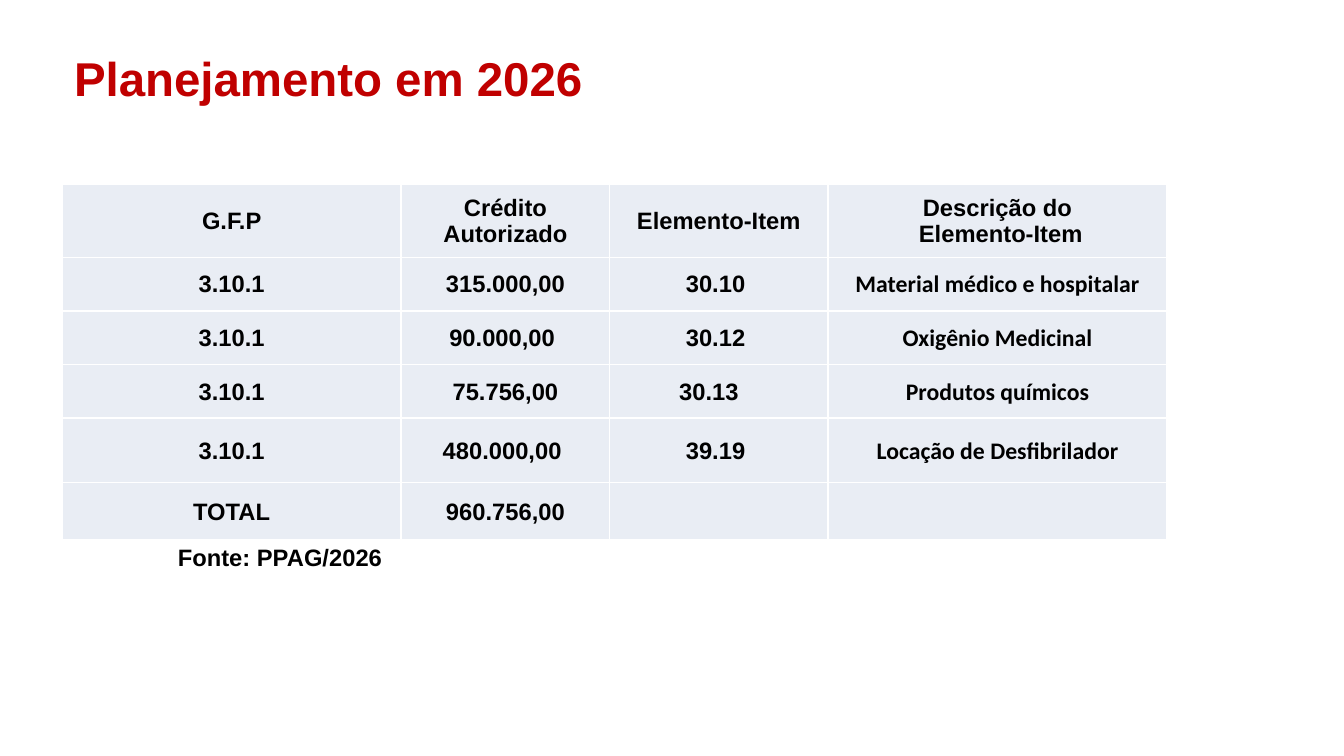
from lxml.etree import fromstring
from pptx import Presentation
from pptx.dml.color import RGBColor
from pptx.enum.text import MSO_ANCHOR as Anchor, PP_ALIGN as Align
from pptx.oxml.ns import nsdecls
from pptx.util import Inches, Pt


def color(hex_code):
    return RGBColor.from_string(hex_code)


def write(paragraph, text, size=14, name="Arial", hex_code="000000"):
    paragraph.text = text
    for attribute, value in {"size": Pt(size), "name": name, "bold": True}.items():
        setattr(paragraph.font, attribute, value)
    paragraph.font.color.rgb = color(hex_code)


presentation = Presentation()
presentation.slide_width = Inches(11.02)
presentation.slide_height = Inches(6.2)
slide = presentation.slides.add_slide(presentation.slide_layouts[6])

# Title and source note
for text, left, top, width, height, size, hex_code in [
    ("Planejamento em 2026", 0.51, 0.35, 6.54, 0.57, 28, "C00000"),
    ("Fonte: PPAG/2026", 1.36, 4.4, 2.11, 0.34, 14, "000000"),
]:
    box = slide.shapes.add_textbox(Inches(left), Inches(top), Inches(width), Inches(height))
    box.text_frame.word_wrap = True
    write(box.text_frame.paragraphs[0], text, size, hex_code=hex_code)

# Budget table
rows = [
    ["G.F.P", "Crédito Autorizado", "Elemento-Item", "Descrição do\n Elemento-Item"],
    ["3.10.1", "315.000,00", "30.10 ", "Material médico e hospitalar"],
    ["3.10.1", "90.000,00 ", "30.12 ", "Oxigênio Medicinal"],
    ["3.10.1", "75.756,00", "30.13 ", "Produtos químicos"],
    ["3.10.1", "480.000,00 ", "39.19 ", "Locação de Desfibrilador"],
    ["TOTAL", "960.756,00", "", ""],
]
column_widths = [2.78, 1.71, 1.79, 2.78]
row_heights = [0.6, 0.44, 0.44, 0.44, 0.53, 0.47]
table = slide.shapes.add_table(
    len(rows), len(column_widths), Inches(0.51), Inches(1.51),
    Inches(sum(column_widths)), Inches(sum(row_heights)),
).table
for column, width in zip(table.columns, column_widths):
    column.width = Inches(width)
for row, height in zip(table.rows, row_heights):
    row.height = Inches(height)

cell_format = {
    "vertical_anchor": Anchor.MIDDLE,
    "margin_left": Inches(0.01),
    "margin_right": Inches(0.01),
    "margin_top": Inches(0.01),
    "margin_bottom": 0,
}
for row_index, row in enumerate(rows):
    for column_index, text in enumerate(row):
        cell = table.cell(row_index, column_index)
        for attribute, value in cell_format.items():
            setattr(cell, attribute, value)
        cell.fill.solid()
        cell.fill.fore_color.rgb = color("E9EDF4")

        # White borders go before the fill
        for position, side in enumerate("LRTB"):
            cell._tc.tcPr.insert(position, fromstring(
                f'<a:ln{side} {nsdecls("a")} w="12700"><a:solidFill>'
                f'<a:srgbClr val="FFFFFF"/></a:solidFill></a:ln{side}>'))

        is_description = row_index > 0 and column_index == 3
        for line_index, line in enumerate(text.split("\n")):
            frame = cell.text_frame
            paragraph = frame.add_paragraph() if line_index else frame.paragraphs[0]
            paragraph.alignment = Align.CENTER
            write(paragraph, line, name="Calibri" if is_description else "Arial")

# Item 30.13 sits slightly left of centre
table.cell(3, 2).margin_right = Inches(0.12)

presentation.save("out.pptx")
